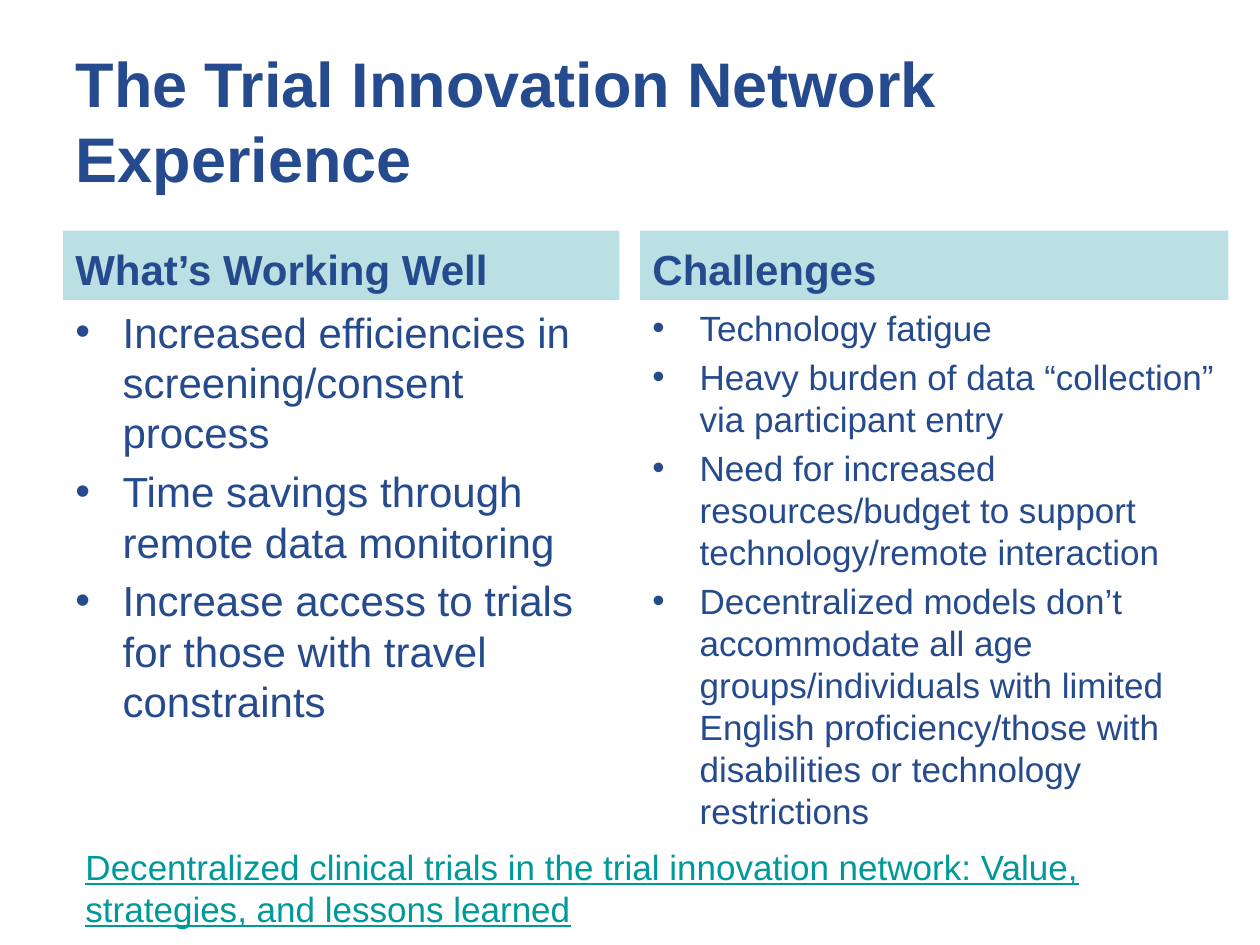
from pptx import Presentation
from pptx.dml.color import RGBColor
from pptx.enum.shapes import MSO_SHAPE as Shape
from pptx.enum.text import MSO_ANCHOR as Anchor, MSO_AUTO_SIZE as AutoSize, PP_ALIGN as Align
from pptx.oxml.ns import qn
from pptx.util import Pt
from lxml.etree import SubElement

NAVY = RGBColor(0x25, 0x4B, 0x8E)
AQUA = RGBColor(0xBB, 0xE0, 0xE3)
TEAL = RGBColor(0x00, 0x99, 0x99)
HEADER_TOP, HEADER_HEIGHT, LIST_HEIGHT = 131.75, 39.6, 311
INDENT = 27

COLUMNS = [
    (36, 318, 24, "What’s Working Well", [
        "Increased efficiencies in screening/consent process",
        "Time savings through remote data monitoring",
        "Increase access to trials for those with travel constraints",
    ]),
    (365.75, 336.25, 20, "Challenges", [
        "Technology fatigue",
        "Heavy burden of data “collection” via participant entry",
        "Need for increased resources/budget to support technology/remote interaction",
        "Decentralized models don’t accommodate all age groups/individuals with limited "
        "English proficiency/those with disabilities or technology restrictions",
    ]),
]


class SlideBuilder:
    """Holds the text style and the current slide."""

    def __init__(self, page, font_name="Arial"):
        self.page = page
        self.font_name = font_name

    def style(self, para, size, color=NAVY, bold=False, underline=False):
        para.alignment = Align.LEFT
        font = para.font
        font.name, font.size, font.bold = self.font_name, Pt(size), bold
        font.underline = underline
        font.color.rgb = color

    def fill_frame(self, box, text, size, anchor=Anchor.TOP, **looks):
        frame = box.text_frame
        frame.text = text
        frame.word_wrap = True
        frame.auto_size = AutoSize.NONE
        frame.vertical_anchor = anchor
        self.style(frame.paragraphs[0], size, **looks)

    def title(self, text, left, top, width, height):
        box = self.page.shapes.title
        box.left, box.top, box.width, box.height = map(Pt, (left, top, width, height))
        self.fill_frame(box, text, 36, bold=True)

    def header(self, text, left, top, width, height):
        bar = self.page.shapes.add_shape(Shape.RECTANGLE, *map(Pt, (left, top, width, height)))
        bar.shadow.inherit = False
        bar.fill.solid()
        bar.fill.fore_color.rgb = AQUA
        bar.line.fill.background()
        self.fill_frame(bar, text, 24, Anchor.BOTTOM, bold=True)

    def bullets(self, items, size, left, top, width, height):
        box = self.page.shapes.add_textbox(*map(Pt, (left, top, width, height)))
        self.fill_frame(box, "\n".join(items), size)
        for index, para in enumerate(box.text_frame.paragraphs):
            properties = para._p.get_or_add_pPr()
            properties.set("marL", str(Pt(INDENT)))
            properties.set("indent", str(-Pt(INDENT)))
            SubElement(properties, qn("a:buFont"), typeface=self.font_name)
            SubElement(properties, qn("a:buChar"), char="•")
            para.space_before = Pt(size * 0.2 if index else 0)
            self.style(para, size)

    def citation(self, text, left, top, width, height):
        box = self.page.shapes.add_textbox(*map(Pt, (left, top, width, height)))
        self.fill_frame(box, text, 20, color=TEAL, underline=True)


def main():
    deck = Presentation()
    deck.slide_width, deck.slide_height = Pt(720), Pt(540)
    builder = SlideBuilder(deck.slides.add_slide(deck.slide_layouts[5]))
    builder.title("The Trial Innovation Network Experience", 36, 21.6, 648, 90)
    for left, width, size, heading, items in COLUMNS:
        builder.header(heading, left, HEADER_TOP, width, HEADER_HEIGHT)
        builder.bullets(items, size, left, HEADER_TOP + HEADER_HEIGHT, width, LIST_HEIGHT)
    builder.citation(
        "Decentralized clinical trials in the trial innovation network: "
        "Value, strategies, and lessons learned", 41.75, 479.5, 606.25, 60.5)
    deck.save("out.pptx")


if __name__ == "__main__":
    main()
